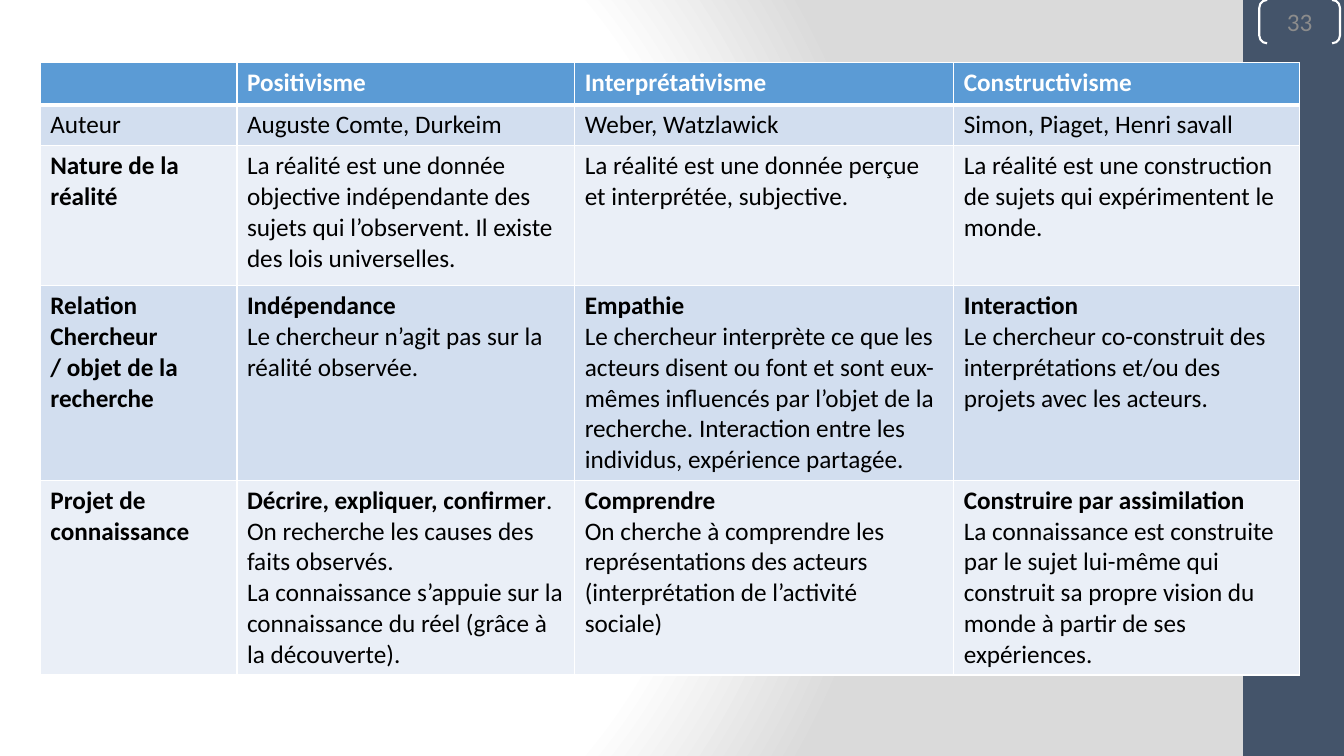
from pptx import Presentation
from pptx.dml.color import RGBColor
from pptx.enum.shapes import MSO_SHAPE as SHAPE
from pptx.enum.text import MSO_ANCHOR as ANCHOR, PP_ALIGN as ALIGN
from pptx.oxml import parse_xml
from pptx.oxml.ns import nsdecls
from pptx.util import Inches, Pt

COLORS = {
    "white": "FFFFFF", "black": "000000", "grey": "DADADA", "number": "8C8C8C",
    "band": "44546A", "header": "5B9BD5", "dark_row": "D2DEEF", "light_row": "EAEFF7",
}


def rgb(name):
    return RGBColor.from_string(COLORS[name])


def add_run(paragraph, text, color, bold=False):
    run = paragraph.add_run()
    run.text = text
    run.font.name = "Calibri"
    run.font.size = Pt(18)
    run.font.bold = bold
    run.font.color.rgb = rgb(color)


prs = Presentation()
prs.slide_width = Inches(13.33)
prs.slide_height = Inches(7.5)
slide = prs.slides.add_slide(prs.slide_layouts[6])

stops = "".join(
    f'<a:gs pos="{percent * 1000}"><a:srgbClr val="{COLORS[color]}"/></a:gs>'
    for percent, color in [(0, "white"), (75, "white"), (100, "grey")]
)
slide.element.cSld.insert(0, parse_xml(
    f'<p:bg {nsdecls("p", "a")}><p:bgPr><a:gradFill rotWithShape="1"><a:gsLst>{stops}</a:gsLst>'
    '<a:path path="circle"><a:fillToRect l="20000" t="50000" r="100000" b="50000"/></a:path>'
    '</a:gradFill><a:effectLst/></p:bgPr></p:bg>'
))

side_band = slide.shapes.add_shape(SHAPE.RECTANGLE, Inches(12.33), 0, Inches(1), Inches(7.5))
side_band.shadow.inherit = False
side_band.fill.solid()
side_band.fill.fore_color.rgb = rgb("band")
side_band.line.fill.background()

page_number = slide.shapes.add_shape(
    SHAPE.DOUBLE_BRACKET, Inches(12.49), 0, Inches(0.8), Inches(0.43))
page_number.shadow.inherit = False
page_number.adjustments[0] = 0.18
page_number.fill.background()
page_number.line.color.rgb = rgb("white")
page_number.line.width = Pt(1.5)
number_frame = page_number.text_frame
number_frame.margin_left = number_frame.margin_right = 0
number_frame.margin_top = number_frame.margin_bottom = 0
number_frame.vertical_anchor = ANCHOR.MIDDLE
number_frame.paragraphs[0].alignment = ALIGN.CENTER
add_run(number_frame.paragraphs[0], "33", "number")

# Text between ** marks is bold; each line is a paragraph.
paradigms = [
    ["", "**Positivisme**", "**Interprétativisme**", "**Constructivisme**"],
    ["Auteur", "Auguste Comte, Durkeim", "Weber, Watzlawick", "Simon, Piaget, Henri savall"],
    [
        "**Nature de la réalité**",
        "La réalité est une donnée\nobjective indépendante des sujets qui l’observent. "
        "Il existe des lois universelles.",
        "La réalité est une donnée perçue\net interprétée, subjective.",
        "La réalité est une construction de sujets qui expérimentent le\nmonde.",
    ],
    [
        "**Relation**\n**Chercheur**\n**/ objet de la**\n**recherche**",
        "**Indépendance**\nLe chercheur n’agit pas sur la\nréalité observée.",
        "**Empathie**\nLe chercheur interprète ce que les acteurs disent ou font et sont "
        "eux-mêmes influencés par l’objet de la recherche. Interaction entre les individus, "
        "expérience partagée.",
        "**Interaction**\nLe chercheur co-construit des\n"
        "interprétations et/ou des projets avec les acteurs.",
    ],
    [
        "**Projet de**\n**connaissance**",
        "**Décrire, expliquer, confirmer**.\nOn recherche les causes des faits observés.\n"
        "La connaissance s’appuie sur la connaissance du réel (grâce à la découverte).",
        "**Comprendre**\nOn cherche à comprendre les\nreprésentations des acteurs\n"
        "(interprétation de l’activité\nsociale)",
        "**Construire par assimilation**\nLa connaissance est construite par le sujet "
        "lui-même qui construit sa propre vision du monde à partir de ses expériences.",
    ],
]
column_widths = [1.95, 3.35, 3.76, 3.43]
row_heights = [0.42, 0.3, 1.39, 1.39, 1.39]
row_fills = ["header", "dark_row", "light_row", "dark_row", "light_row"]

comparison = slide.shapes.add_table(
    len(row_heights), len(column_widths), Inches(0.4), Inches(0.62),
    Inches(sum(column_widths)), Inches(sum(row_heights))).table
for column, width in zip(comparison.columns, column_widths):
    column.width = Inches(width)

for r, (row, height, fill) in enumerate(zip(paradigms, row_heights, row_fills)):
    comparison.rows[r].height = Inches(height)
    text_color = "white" if r == 0 else "black"
    for c, content in enumerate(row):
        cell = comparison.cell(r, c)
        cell.fill.solid()
        cell.fill.fore_color.rgb = rgb(fill)
        for position, side in enumerate("LRTB"):
            thick = (r, side) in [(0, "B"), (1, "T")]
            cell._tc.tcPr.insert(position, parse_xml(
                f'<a:ln{side} {nsdecls("a")} w="{Pt(3 if thick else 1)}"><a:solidFill>'
                f'<a:srgbClr val="{COLORS["white"]}"/></a:solidFill></a:ln{side}>'
            ))
        for i, line in enumerate(content.split("\n")):
            frame = cell.text_frame
            paragraph = frame.add_paragraph() if i else frame.paragraphs[0]
            for part, text in enumerate(line.split("**")):
                if text:
                    add_run(paragraph, text, text_color, bold=part % 2 == 1)

prs.save("out.pptx")
